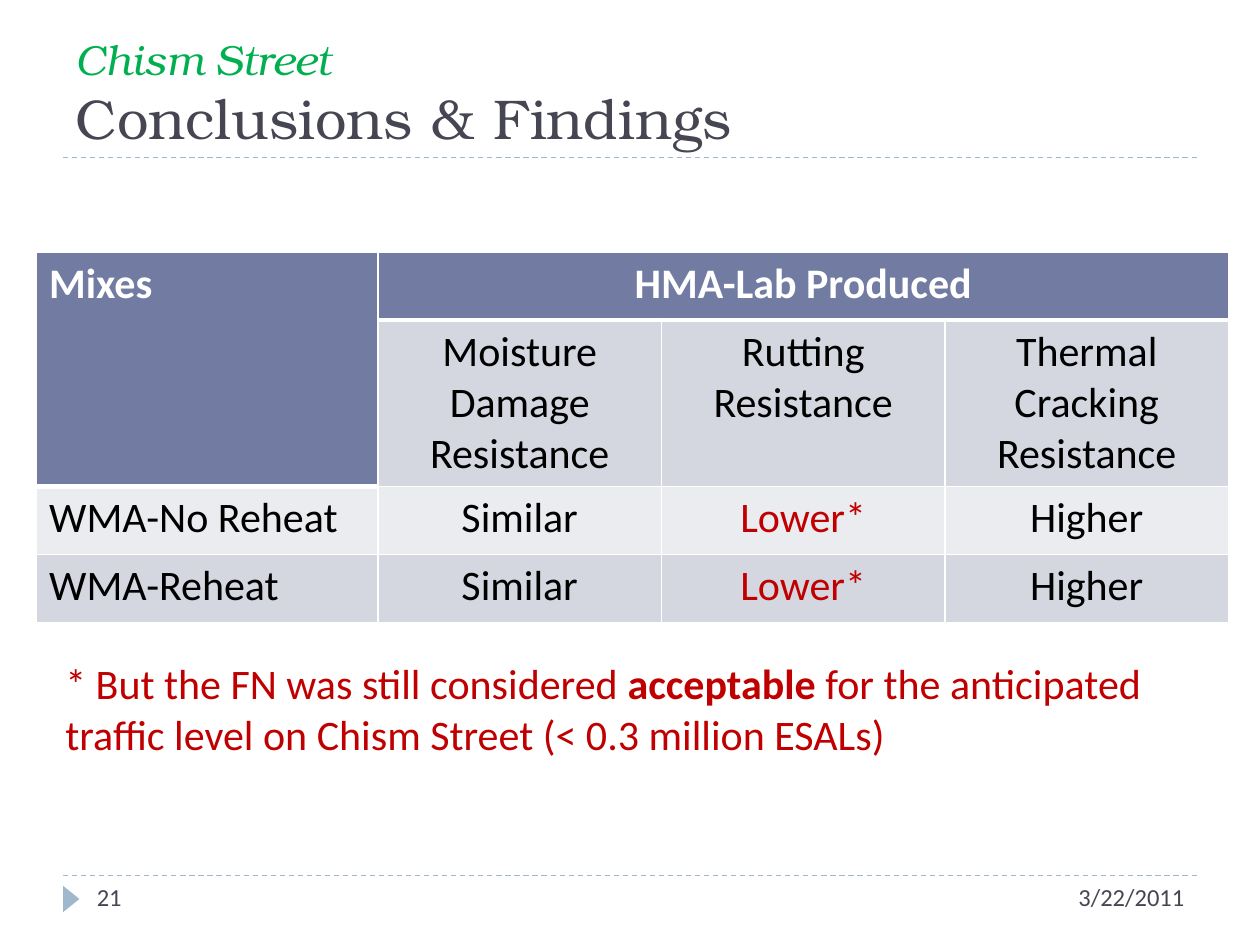
import pptx
import pptx.util
import pptx.dml.color
import pptx.enum.dml
import pptx.enum.shapes
import pptx.enum.text
import pptx.oxml
import pptx.oxml.ns
from lxml import etree

Inches, Pt = pptx.util.Inches, pptx.util.Pt
ALIGN = pptx.enum.text.PP_ALIGN
ANCHOR = pptx.enum.text.MSO_ANCHOR
SHAPE = pptx.enum.shapes.MSO_SHAPE
qn = pptx.oxml.ns.qn

COLORS = {"ink": "464653", "green": "00B050", "red": "C00000", "rule": "9FB8CD",
          "head": "727CA3", "dark": "D5D7E0", "light": "EBECF0",
          "white": "FFFFFF", "black": "000000"}
BODY, SERIF = "Calibri", "TeX Gyre Bonum"

TITLE = [("Chism Street", 24, "green", True),
         ("Conclusions & Findings", 32, "ink", False)]
ROWS = [["Mixes", "HMA-Lab Produced", "", ""],
        ["", "Moisture Damage Resistance", "Rutting Resistance",
         "Thermal Cracking Resistance"],
        ["WMA-No Reheat", "Similar", "Lower*", "Higher"],
        ["WMA-Reheat", "Similar", "Lower*", "Higher"]]
FILLS = ["head", "dark", "light", "dark"]
WIDTHS = [2.71, 2.25, 2.25, 2.25]
HEIGHTS = [0.54, 1.32, 0.54, 0.54]
NOTE = [("* But the FN was still considered ", False),
        ("acceptable", True),
        (" for the anticipated traffic level on Chism Street (< 0.3 million ESALs)", False)]
FOOTER = [("21", 0.67, 2.17, ALIGN.LEFT), ("3/22/2011", 7, 2.5, ALIGN.RIGHT)]
LEFT, RIGHT, TOP_RULE, LOW_RULE = 0.5, 9.5, 1.25, 6.95


def rgb(name):
    return pptx.dml.color.RGBColor.from_string(COLORS[name])


def style(run, size, color, face=BODY, bold=False, italic=False):
    font = run.font
    font.size, font.name, font.bold, font.italic = Pt(size), face, bold, italic
    font.color.rgb = rgb(color)


def add_title(slide):
    title = slide.shapes.title
    title.left, title.top = Inches(LEFT), Inches(0.17)
    title.width, title.height = Inches(RIGHT - LEFT), Inches(1.08)
    frame = title.text_frame
    frame.text = "\v".join(line[0] for line in TITLE)
    frame.auto_size = pptx.enum.text.MSO_AUTO_SIZE.NONE
    frame.vertical_anchor = ANCHOR.BOTTOM
    para = frame.paragraphs[0]
    para.alignment = ALIGN.LEFT
    for run, (_, size, color, italic) in zip(para.runs, TITLE):
        style(run, size, color, SERIF, italic=italic)
    gap = para._p.find(qn("a:br"))
    etree.SubElement(gap, qn("a:rPr")).set("sz", str(TITLE[0][1] * 100))


def add_rule(slide, y):
    line = slide.shapes.add_connector(
        pptx.enum.shapes.MSO_CONNECTOR.STRAIGHT,
        Inches(LEFT), Inches(y), Inches(RIGHT), Inches(y))
    line.line.color.rgb = rgb("rule")
    line.line.width = Pt(0.75)
    line.line.dash_style = pptx.enum.dml.MSO_LINE.DASH
    etree.SubElement(line._element.spPr, qn("a:effectLst"))


def add_mark(slide):
    mark = slide.shapes.add_shape(SHAPE.ISOSCELES_TRIANGLE, Inches(0.46),
                                  Inches(7.07), Inches(0.21), Inches(0.13))
    mark.rotation = 90
    mark.shadow.inherit = False
    mark.fill.solid()
    mark.fill.fore_color.rgb = rgb("rule")
    mark.line.fill.background()


def add_text(slide, box, parts, size, color, align=ALIGN.LEFT):
    frame = slide.shapes.add_textbox(*map(Inches, box)).text_frame
    frame.word_wrap = True
    para = frame.paragraphs[0]
    para.alignment = align
    for text, bold in parts:
        run = para.add_run()
        run.text = text
        style(run, size, color, bold=bold)


def add_borders(cell, low):
    """White lines on all four sides; low is the bottom width in points."""
    props = cell._tc.get_or_add_tcPr()
    for place, (side, width) in enumerate(zip("LRTB", (1, 1, 1, low))):
        line = etree.Element(qn("a:ln" + side), w=str(Pt(width)))
        fill = etree.SubElement(line, qn("a:solidFill"))
        etree.SubElement(fill, qn("a:srgbClr"), val=COLORS["white"])
        props.insert(place, line)


def add_grid(slide):
    table = slide.shapes.add_table(
        len(ROWS), len(WIDTHS), Inches(0.29), Inches(2),
        Inches(sum(WIDTHS)), Inches(sum(HEIGHTS))).table
    for col, width in zip(table.columns, WIDTHS):
        col.width = Inches(width)
    for row, height in zip(table.rows, HEIGHTS):
        row.height = Inches(height)
    table.cell(0, 0).merge(table.cell(1, 0))
    table.cell(0, 1).merge(table.cell(0, 3))
    for r, row in enumerate(ROWS):
        for c, text in enumerate(row):
            cell = table.cell(r, c)
            head = r == 0 or (r, c) == (1, 0)
            cell.fill.solid()
            cell.fill.fore_color.rgb = rgb("head" if head else FILLS[r])
            add_borders(cell, 3 if head else 1)
            if not text:
                continue
            cell.text_frame.text = text
            para = cell.text_frame.paragraphs[0]
            para.alignment = ALIGN.CENTER if c else ALIGN.LEFT
            color = "white" if head else "red" if text == "Lower*" else "black"
            style(para.runs[0], 24, color, bold=head)


def main():
    deck = pptx.Presentation()
    deck.slide_width, deck.slide_height = Inches(10), Inches(7.5)
    slide = deck.slides.add_slide(deck.slide_layouts[5])
    for y in (LOW_RULE, TOP_RULE):
        add_rule(slide, y)
    add_mark(slide)
    add_title(slide)
    add_grid(slide)
    add_text(slide, (0.42, 5.17, 8.92, 0.91), NOTE, 24, "red")
    for text, left, width, align in FOOTER:
        add_text(slide, (left, LOW_RULE, width, 0.4), [(text, False)], 14, "ink", align)
    deck.save("out.pptx")


if __name__ == "__main__":
    main()
